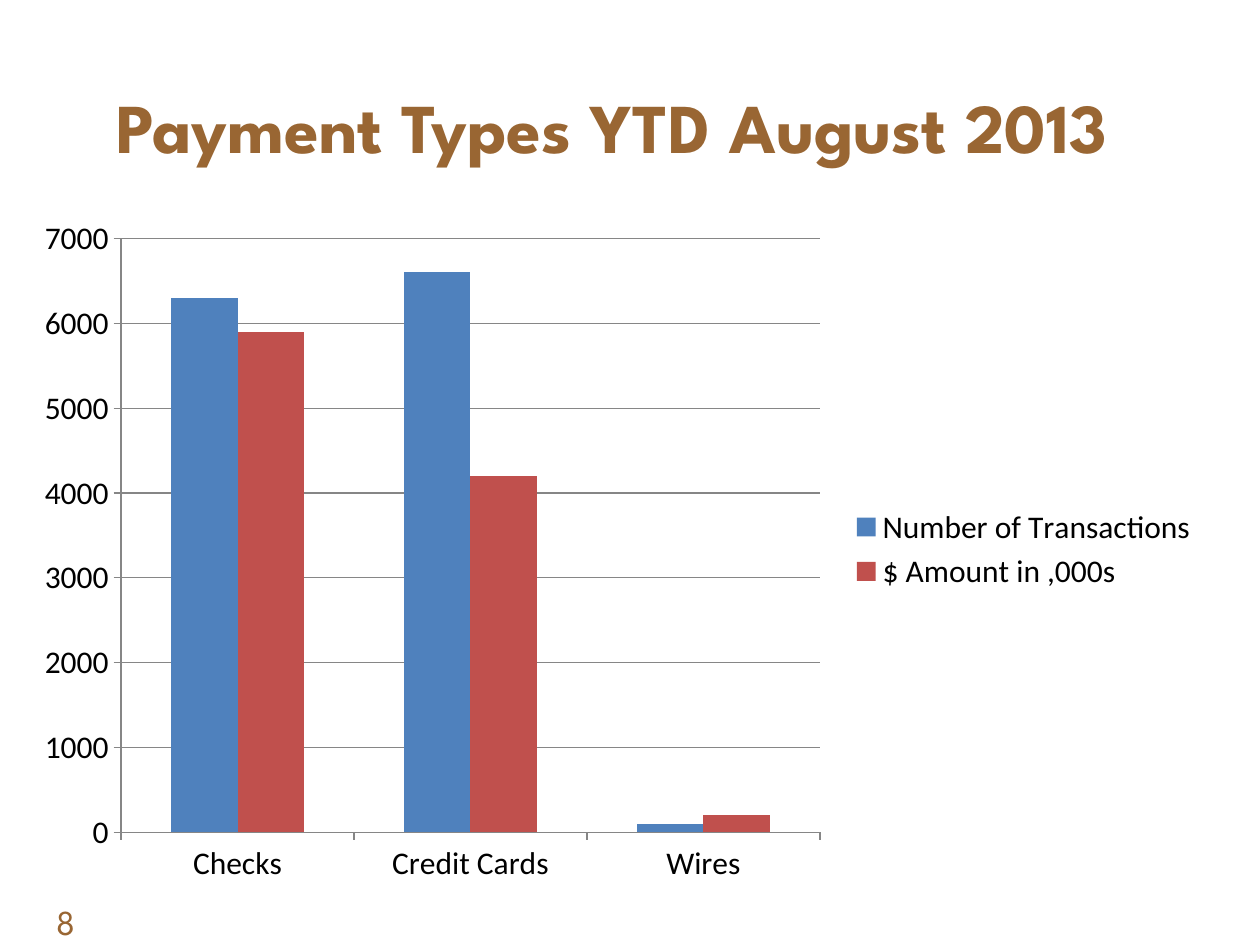
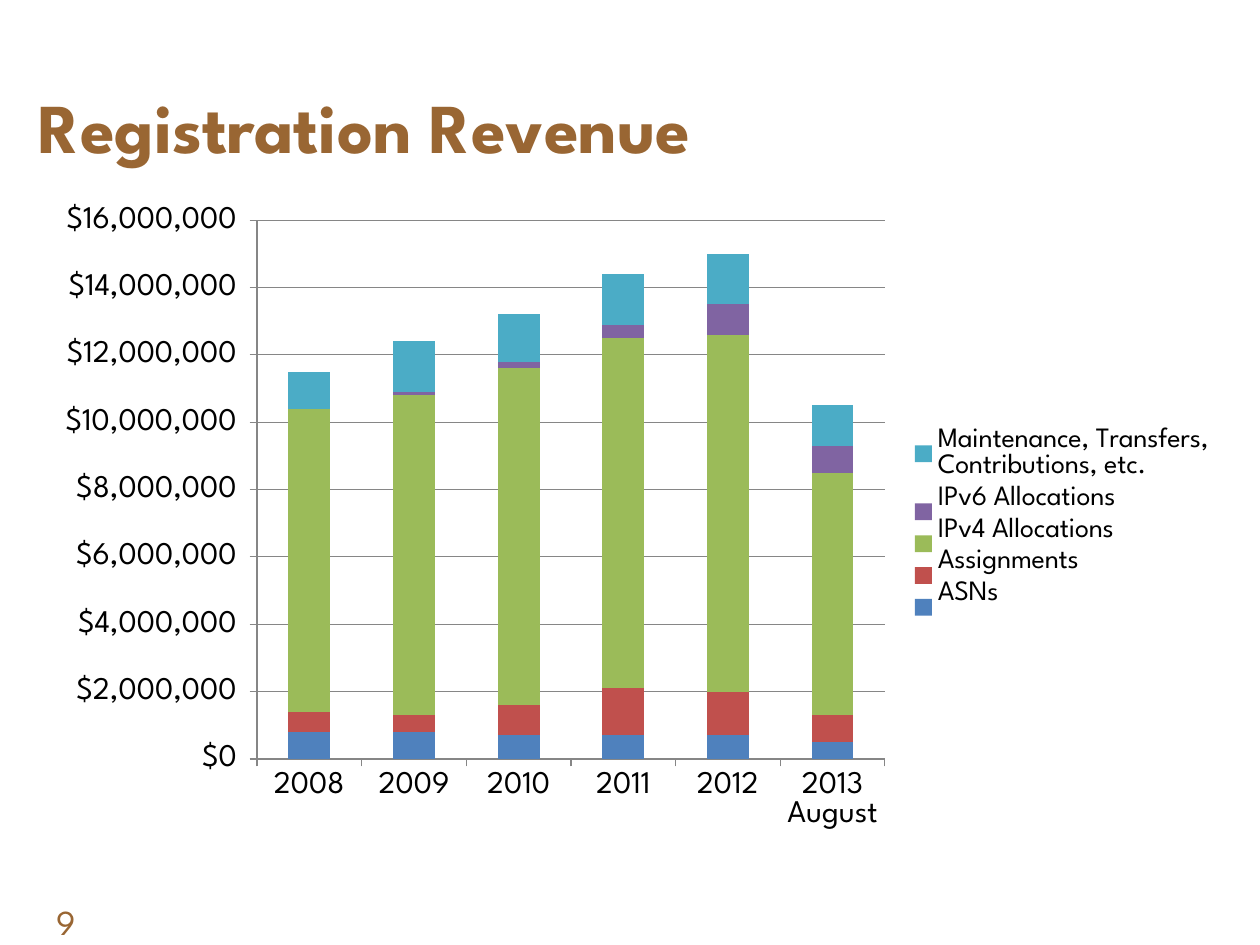
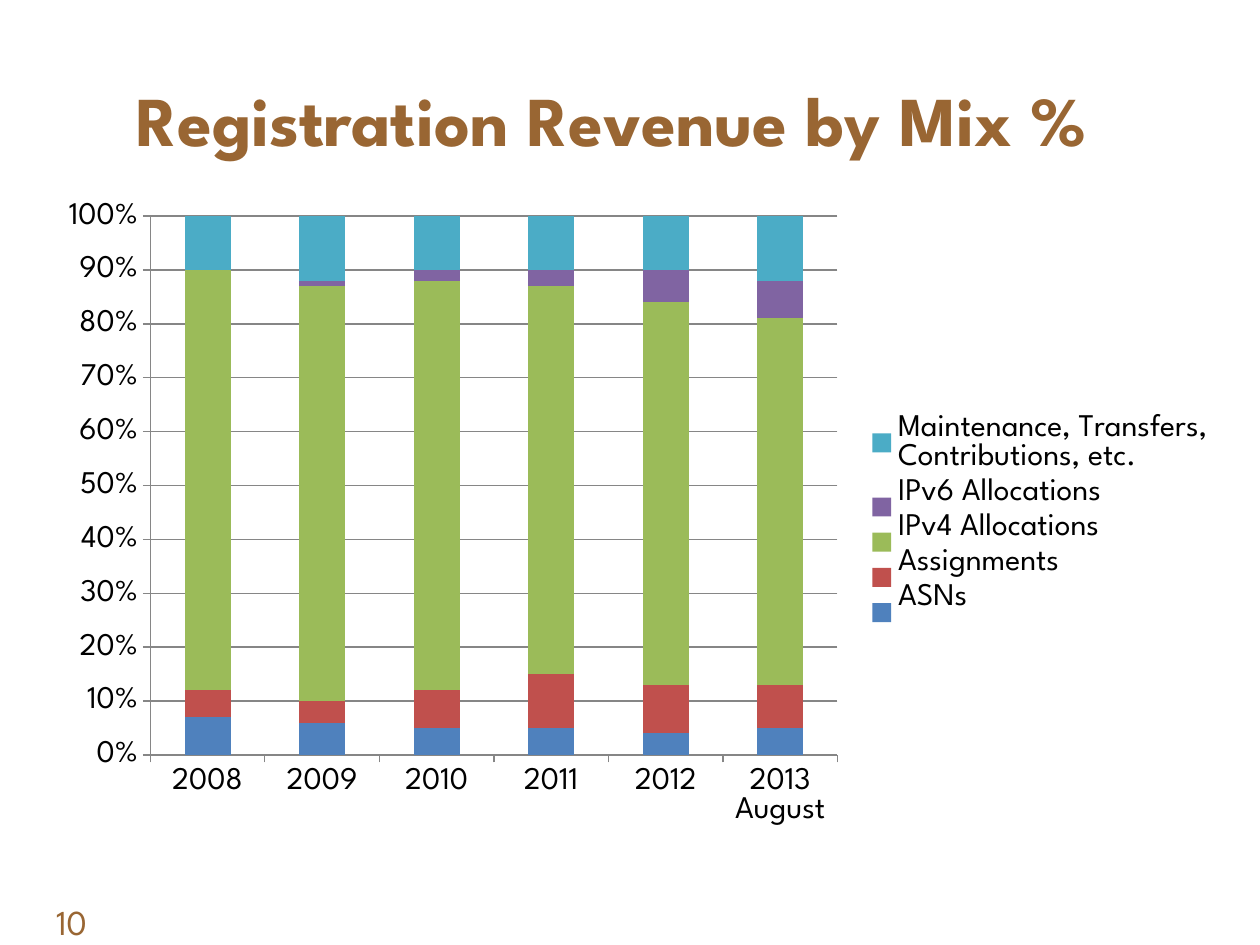
import pptx
import pptx.chart.data
import pptx.dml.color
import pptx.enum.chart
import pptx.enum.text
import pptx.oxml
import pptx.util
from lxml import etree

Pt = pptx.util.Pt
ChartType = pptx.enum.chart.XL_CHART_TYPE
Align = pptx.enum.text.PP_ALIGN

COLORS = {
    "brown": "996633",
    "black": "000000",
    "grid": "868686",
    "blue": "4F81BD",
    "red": "C0504D",
    "green": "9BBB59",
    "purple": "8064A2",
    "teal": "4BACC6",
}
SERIES_COLORS = ["blue", "red", "green", "purple", "teal"]
HEADING_FONT = "League Spartan"
CHART_FONT = "Calibri"

YEARS = ["2008", "2009", "2010", "2011", "2012", "2013 August"]
REVENUE_SOURCES = [
    "ASNs",
    "Assignments",
    "IPv4 Allocations",
    "IPv6 Allocations",
    "Maintenance, Transfers, Contributions, etc.",
]
REVENUE = [
    [800000, 800000, 700000, 700000, 700000, 500000],
    [600000, 500000, 900000, 1400000, 1300000, 800000],
    [9000000, 9500000, 10000000, 10400000, 10600000, 7200000],
    [0, 100000, 200000, 400000, 900000, 800000],
    [1100000, 1500000, 1400000, 1500000, 1500000, 1200000],
]
REVENUE_MIX = [
    [7, 6, 5, 5, 4, 5],
    [5, 4, 7, 10, 9, 8],
    [78, 77, 76, 72, 71, 68],
    [0, 1, 2, 3, 6, 7],
    [10, 12, 10, 10, 10, 12],
]


def rgb(name):
    return pptx.dml.color.RGBColor.from_string(COLORS[name])


def apply_font(font, color="black", **values):
    for name, value in values.items():
        setattr(font, name, value)
    font.color.rgb = rgb(color)


def place_plot(chart, **fractions):
    """Fix the inner plot area as fractions of the chart frame."""
    plot_area = chart._chartSpace.chart.plotArea
    tag = pptx.oxml.ns.qn
    for layout in plot_area.findall(tag("c:layout")):
        plot_area.remove(layout)
    layout = etree.Element(tag("c:layout"))
    manual = etree.SubElement(layout, tag("c:manualLayout"))
    settings = {"layoutTarget": "inner", "xMode": "edge", "yMode": "edge", **fractions}
    for name, value in settings.items():
        etree.SubElement(manual, tag(f"c:{name}")).set("val", str(value))
    plot_area.insert(0, layout)


class Deck:
    def __init__(self):
        self.presentation = pptx.Presentation()
        self.presentation.slide_width = Pt(720)
        self.presentation.slide_height = Pt(540)
        self.slide = None

    def add_slide(self, title, number, top=14.4, alignment=Align.CENTER):
        self.slide = self.presentation.slides.add_slide(self.presentation.slide_layouts[5])
        self.title(title, top, alignment)
        self.page_number(number)

    def title(self, text, top, alignment):
        shape = self.slide.shapes.title
        shape.left, shape.top, shape.width, shape.height = Pt(15), Pt(top), Pt(669), Pt(115)
        frame = shape.text_frame
        frame.text = text
        frame.auto_size = pptx.enum.text.MSO_AUTO_SIZE.NONE
        frame.vertical_anchor = pptx.enum.text.MSO_ANCHOR.MIDDLE
        paragraph = frame.paragraphs[0]
        paragraph.alignment = alignment
        apply_font(paragraph.runs[0].font, "brown", name=HEADING_FONT, size=Pt(40), bold=True)

    def page_number(self, number):
        shape = self.slide.shapes.add_textbox(Pt(25), Pt(511), Pt(56), Pt(29))
        frame = shape.text_frame
        frame.word_wrap = True
        frame.text = str(number)
        apply_font(frame.paragraphs[0].runs[0].font, "brown", name=HEADING_FONT, size=Pt(20))

    def chart(self, kind, box, categories, series, plot_box, number_format="General",
              font=HEADING_FONT, legend_size=18):
        data = pptx.chart.data.CategoryChartData()
        data.categories = categories
        for name, values in series:
            data.add_series(name, values)
        chart = self.slide.shapes.add_chart(kind, *map(Pt, box), data).chart
        chart.has_title = False
        apply_font(chart.font, name=font, size=Pt(18))

        plot = chart.plots[0]
        plot.gap_width = 150
        plot.overlap = 0 if kind == ChartType.COLUMN_CLUSTERED else 100
        plot.vary_by_categories = False
        for bars, color in zip(plot.series, SERIES_COLORS):
            bars.format.fill.solid()
            bars.format.fill.fore_color.rgb = rgb(color)

        chart.value_axis.has_major_gridlines = True
        for axis in (chart.category_axis, chart.value_axis):
            axis.major_tick_mark = pptx.enum.chart.XL_TICK_MARK.OUTSIDE
            apply_font(axis.tick_labels.font, name=font, size=Pt(18))
        for part in (chart.category_axis, chart.value_axis, chart.value_axis.major_gridlines):
            part.format.line.color.rgb = rgb("grid")
            part.format.line.width = Pt(0.75)
        labels = chart.value_axis.tick_labels
        labels.number_format = number_format
        labels.number_format_is_linked = False

        chart.has_legend = True
        chart.legend.position = pptx.enum.chart.XL_LEGEND_POSITION.RIGHT
        chart.legend.include_in_layout = False
        apply_font(chart.legend.font, name=font, size=Pt(legend_size))
        place_plot(chart, **plot_box)


def main():
    deck = Deck()

    deck.add_slide("Payment Types YTD August 2013", 8)
    deck.chart(
        ChartType.COLUMN_CLUSTERED, (15, 116.6, 677, 394.6),
        ["Checks", "Credit Cards", "Wires"],
        [("Number of Transactions", [6300, 6600, 100]),
         ("$ Amount in ,000s", [5900, 4200, 200])],
        dict(x=0.08, y=0.05, w=0.59, h=0.86), font=CHART_FONT)

    deck.add_slide("Registration Revenue", 9, alignment=Align.LEFT)
    deck.chart(
        ChartType.COLUMN_STACKED, (25, 111, 677, 371), YEARS,
        zip(REVENUE_SOURCES, REVENUE),
        dict(x=0.18, y=0.04, w=0.53, h=0.83),
        number_format='"$"#,##0_);[Red]\\("$"#,##0\\)', legend_size=16)

    deck.add_slide("Registration Revenue by Mix %", 10, top=10)
    deck.chart(
        ChartType.COLUMN_STACKED_100, (25, 108.7, 677, 371), YEARS,
        zip(REVENUE_SOURCES, REVENUE_MIX),
        dict(x=0.09, y=0.04, w=0.58, h=0.83), number_format="0%")

    deck.presentation.save("out.pptx")


if __name__ == "__main__":
    main()
